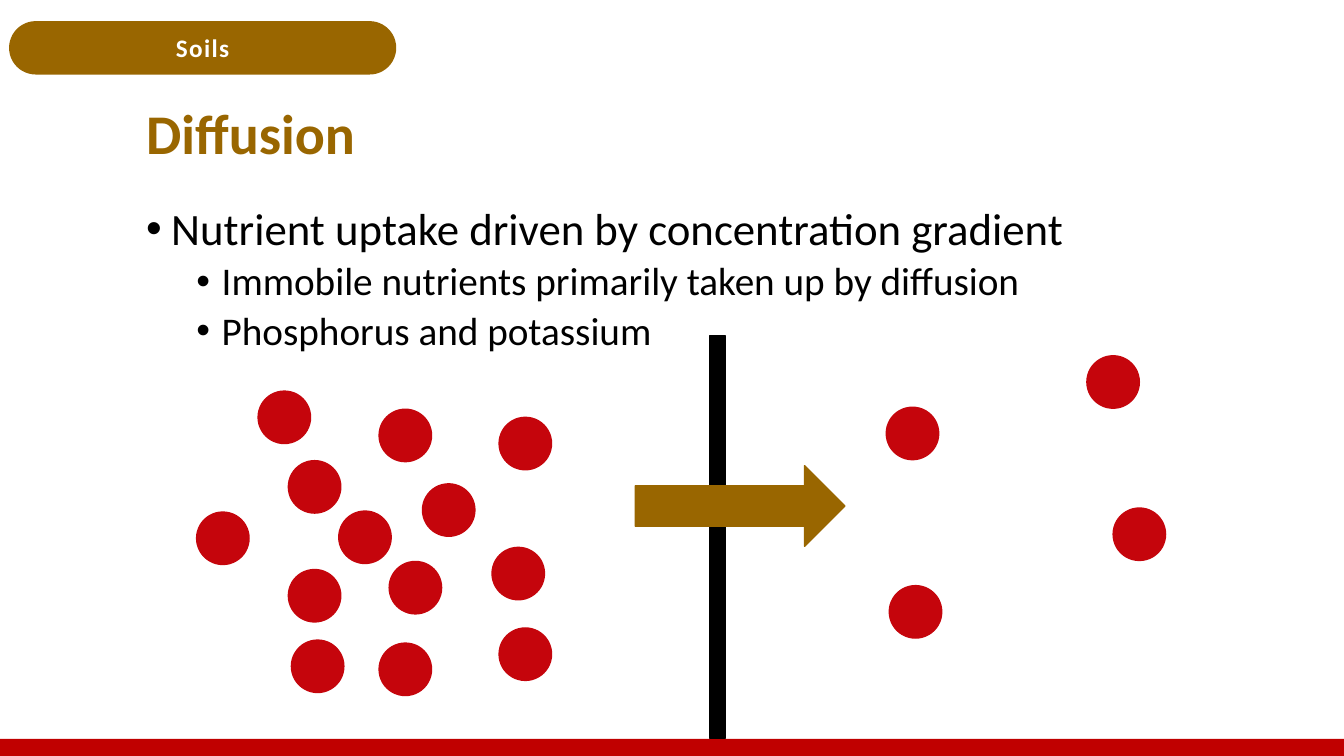
from dataclasses import dataclass

import pptx
import pptx.dml.color
import pptx.enum.shapes
import pptx.enum.text
import pptx.oxml
import pptx.oxml.ns
import pptx.util
from pptx.util import Inches

SHAPE = pptx.enum.shapes.MSO_SHAPE
ANCHOR = pptx.enum.text.MSO_ANCHOR
ALIGN = pptx.enum.text.PP_ALIGN


@dataclass(frozen=True)
class Theme:
    font: str = "Calibri"
    brown: str = "996600"
    red: str = "C5050C"
    footer_red: str = "C00000"
    black: str = "000000"
    white: str = "FFFFFF"
    tag_size: int = 18
    title_size: int = 40
    body_sizes: tuple[int, int] = (32, 28)


@dataclass(frozen=True)
class Block:
    kind: SHAPE
    left: float
    top: float
    width: float
    height: float
    color: str
    outlined: bool = True


@dataclass(frozen=True)
class Bullet:
    text: str
    level: int = 0


THEME = Theme()
ION_SIZE = 0.52

FOOTER = Block(SHAPE.RECTANGLE, 0, 7.33, 13.33, 0.17, THEME.footer_red, False)
TAG = Block(SHAPE.ROUNDED_RECTANGLE, 0.09, 0.21, 3.84, 0.53, THEME.brown, False)
MEMBRANE = Block(SHAPE.RECTANGLE, 7.04, 3.33, 0.15, 4, THEME.black)
FLOW_ARROW = Block(SHAPE.RIGHT_ARROW, 6.3, 4.62, 2.08, 0.8, THEME.brown)

BULLETS = [
    Bullet("Nutrient uptake driven by concentration gradient"),
    Bullet("Immobile nutrients primarily taken up by diffusion", 1),
    Bullet("Phosphorus and potassium", 1),
]

# Left and top of each ion on the two sides of the membrane
CROWDED_SIDE = [
    (2.86, 4.57), (2.56, 3.88), (3.76, 4.06), (3.36, 5.07), (2.86, 5.65),
    (4.19, 4.8), (3.86, 5.57), (4.88, 5.43), (2.89, 6.35), (1.95, 5.08),
    (4.95, 6.23), (3.76, 6.38), (4.95, 4.14),
]
SPARSE_SIDE = [(8.79, 4.04), (10.78, 3.53), (8.82, 5.81), (11.04, 5.04)]


def rgb(color: str) -> pptx.dml.color.RGBColor:
    return pptx.dml.color.RGBColor.from_string(color)


def style_runs(para, size: int, color: str, bold: bool = False) -> None:
    for span in para.runs:
        span.font.name = THEME.font
        span.font.size = pptx.util.Pt(size)
        span.font.bold = bold
        span.font.color.rgb = rgb(color)


def draw_block(page, block: Block):
    shape = page.shapes.add_shape(
        block.kind, Inches(block.left), Inches(block.top),
        Inches(block.width), Inches(block.height))
    shape.shadow.inherit = False
    shape.fill.solid()
    shape.fill.fore_color.rgb = rgb(block.color)
    if block.outlined:
        shape.line.color.rgb = rgb(block.color)
        shape.line.width = pptx.util.Pt(1)
    else:
        shape.line.fill.background()
    return shape


def draw_tag(page, text: str) -> None:
    tag = draw_block(page, TAG)
    tag.adjustments[0] = 0.5
    tag.text_frame.text = text
    tag.text_frame.vertical_anchor = ANCHOR.MIDDLE
    para = tag.text_frame.paragraphs[0]
    para.alignment = ALIGN.CENTER
    style_runs(para, THEME.tag_size, THEME.white, bold=True)
    para.runs[0].font._element.set("spc", "100")


def fill_title(page, text: str) -> None:
    title = page.shapes.title
    title.left, title.top = Inches(1.35), Inches(0.85)
    title.width, title.height = Inches(10.89), Inches(1)
    title.text_frame.text = text
    title.text_frame.vertical_anchor = ANCHOR.MIDDLE
    para = title.text_frame.paragraphs[0]
    para.alignment = ALIGN.LEFT
    para.line_spacing = 0.9
    style_runs(para, THEME.title_size, THEME.brown, bold=True)


def add_bullet_mark(para, level: int) -> None:
    properties = para._p.get_or_add_pPr()
    properties.set("marL", str(Inches(0.25 + 0.5 * level)))
    properties.set("indent", str(Inches(-0.25)))
    for name, attribute, value in (("a:buFont", "typeface", "Arial"),
                                   ("a:buChar", "char", "•")):
        mark = pptx.oxml.parse_xml(f"<{name} {pptx.oxml.ns.nsdecls('a')}/>")
        mark.set(attribute, value)
        properties.append(mark)


def draw_bullets(page, bullets: list[Bullet]) -> None:
    box = page.shapes.add_textbox(Inches(1.35), Inches(2), Inches(10.89), Inches(4.76))
    frame = box.text_frame
    frame.word_wrap = True
    frame.text = "\n".join(bullet.text for bullet in bullets)
    for para, bullet in zip(frame.paragraphs, bullets):
        add_bullet_mark(para, bullet.level)
        para.level = bullet.level
        para.line_spacing = 0.9
        para.space_before = pptx.util.Pt(5 * bullet.level)
        style_runs(para, THEME.body_sizes[bullet.level], THEME.black)


def main() -> None:
    deck = pptx.Presentation()
    deck.slide_width, deck.slide_height = Inches(13.33), Inches(7.5)
    page = deck.slides.add_slide(deck.slide_layouts.get_by_name("Title Only"))

    # Frame and text
    draw_block(page, FOOTER)
    draw_tag(page, "Soils")
    fill_title(page, "Diffusion")
    draw_bullets(page, BULLETS)

    # Diffusion diagram
    for left, top in CROWDED_SIDE + SPARSE_SIDE:
        draw_block(page, Block(SHAPE.OVAL, left, top, ION_SIZE, ION_SIZE, THEME.red))
    draw_block(page, MEMBRANE)
    draw_block(page, FLOW_ARROW)

    deck.save("out.pptx")


if __name__ == "__main__":
    main()
